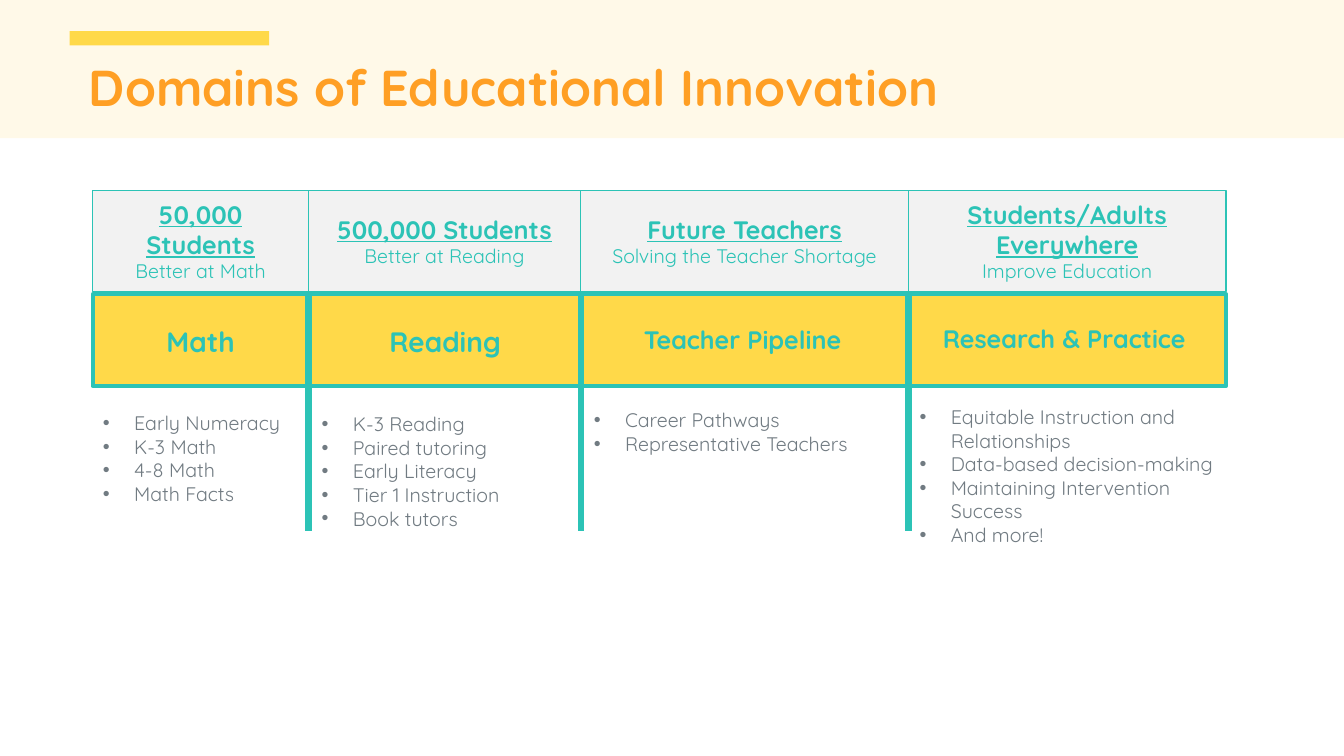
"""Build the slide on the four domains of educational innovation."""
from lxml import etree
from pptx import Presentation, util as u
from pptx.dml.color import RGBColor
from pptx.enum import shapes, text
from pptx.oxml.ns import qn

COLORS = {"band": "FFF4D2", "yellow": "FFD949", "orange": "FF9F24",
          "teal": "2CC3B6", "panel": "F2F2F2", "gray": "717B82"}
EDGES = [0.92, 3.06, 5.76, 9.01, 12.16]
GOAL_TOP, GOAL_HEIGHT = 1.89, 1
DIVIDER_BOTTOM = 5.27
DOMAINS = [
    {"goal": "50,000 Students", "detail": "Better at Math",
     "label": "Math", "label_size": 20, "label_box": (0.98, 3.17, 2.02, 0.44),
     "list_box": (0.92, 4.03, 2.19, 1.25),
     "topics": ["Early Numeracy", "K-3 Math", "4-8 Math", "Math Facts"]},
    {"goal": "500,000 Students", "detail": "Better at Reading",
     "label": "Reading", "label_size": 20, "label_box": (3.05, 3.17, 2.73, 0.44),
     "list_box": (3.09, 4.04, 2.61, 1.28),
     "topics": ["K-3 Reading", "Paired tutoring", "Early Literacy",
                "Tier 1 Instruction", "Book tutors"]},
    {"goal": "Future Teachers", "detail": "Solving the Teacher Shortage",
     "label": "Teacher Pipeline", "label_size": 18, "label_box": (6, 3.17, 2.73, 0.4),
     "list_box": (5.79, 4, 3.03, 0.81),
     "topics": ["Career Pathways", "Representative Teachers"]},
    {"goal": "Students/Adults Everywhere", "detail": "Improve Education",
     "label": "Research & Practice", "label_size": 18, "label_box": (9.19, 3.16, 2.73, 0.4),
     "list_box": (9.02, 3.97, 3.24, 2.15),
     "topics": ["Equitable Instruction and Relationships",
                "Data-based decision-making",
                "Maintaining Intervention Success", "And more!"]},
]


def add_box(box, fill, line_width=0):
    """Add a filled rectangle, outlined in teal if a width is given."""
    shape = slide.shapes.add_shape(shapes.MSO_SHAPE.RECTANGLE, *map(u.Inches, box))
    shape.shadow.inherit = False
    shape.fill.solid()
    shape.fill.fore_color.rgb = RGBColor.from_string(COLORS[fill])
    if line_width:
        shape.line.color.rgb = RGBColor.from_string(COLORS["teal"])
        shape.line.width = u.Pt(line_width)
    else:
        shape.line.fill.background()
    return shape


def add_run(paragraph, words, size, color, bold=False, underline=False):
    """Add one formatted run to a paragraph."""
    run = paragraph.add_run()
    run.text = words
    run.font.name = "Quicksand"
    run.font.size = u.Pt(size)
    run.font.bold = bold
    run.font.underline = underline
    run.font.color.rgb = RGBColor.from_string(COLORS[color])


deck = Presentation()
deck.slide_width, deck.slide_height = u.Inches(13.33), u.Inches(7.5)
slide = deck.slides.add_slide(deck.slide_layouts.get_by_name("Comparison"))
title, *topic_lists = slide.placeholders

band = add_box((0, 0, 13.33, 1.37), "band")
band_color = band.fill._xPr.find(qn("a:solidFill"))[0]
etree.SubElement(band_color, qn("a:alpha"), val="49000")
add_box((0.69, 0.31, 1.98, 0.14), "yellow")
slide.shapes._spTree.append(title._element)

title.left, title.top, title.width, title.height = map(u.Inches, (0.78, 0.57, 12.55, 0.81))
title.text_frame.vertical_anchor = text.MSO_ANCHOR.TOP
title.text_frame.auto_size = text.MSO_AUTO_SIZE.NONE
heading = title.text_frame.paragraphs[0]
heading.alignment = text.PP_ALIGN.LEFT
heading.line_spacing = 0.9
add_run(heading, "Domains of Educational Innovation", 36, "orange", bold=True)

for domain, left, right in zip(DOMAINS, EDGES, EDGES[1:]):
    goal = add_box((left, GOAL_TOP, right - left, GOAL_HEIGHT), "panel", 1)
    goal.text_frame.word_wrap = True
    goal.text_frame.vertical_anchor = text.MSO_ANCHOR.MIDDLE
    goal_line = goal.text_frame.paragraphs[0]
    detail_line = goal.text_frame.add_paragraph()
    goal_line.alignment = detail_line.alignment = text.PP_ALIGN.CENTER
    add_run(goal_line, domain["goal"], 18, "teal", bold=True, underline=True)
    add_run(detail_line, domain["detail"], 14, "teal")

add_box((EDGES[0], 2.92, EDGES[-1] - EDGES[0], 0.91), "yellow", 3)

for edge in EDGES[1:-1]:
    divider = slide.shapes.add_connector(
        shapes.MSO_CONNECTOR.STRAIGHT, u.Inches(edge), u.Inches(GOAL_TOP + GOAL_HEIGHT),
        u.Inches(edge), u.Inches(DIVIDER_BOTTOM))
    divider.line.color.rgb = RGBColor.from_string(COLORS["teal"])
    divider.line.width = u.Pt(4.5)
    etree.SubElement(divider._element.spPr, qn("a:effectLst"))

for domain, topic_list in zip(DOMAINS, topic_lists):
    label = slide.shapes.add_textbox(*map(u.Inches, domain["label_box"]))
    label.text_frame.word_wrap = True
    label_line = label.text_frame.paragraphs[0]
    label_line.alignment = text.PP_ALIGN.CENTER
    add_run(label_line, domain["label"], domain["label_size"], "teal", bold=True)

    topic_list.left, topic_list.top, topic_list.width, topic_list.height = map(
        u.Inches, domain["list_box"])
    slide.shapes._spTree.append(topic_list._element)
    frame = topic_list.text_frame
    frame.vertical_anchor = text.MSO_ANCHOR.TOP
    frame.auto_size = text.MSO_AUTO_SIZE.NONE
    for number, topic in enumerate(domain["topics"]):
        item = frame.add_paragraph() if number else frame.paragraphs[0]
        item.space_before = u.Pt(0)
        props = item._p.get_or_add_pPr()
        props.set("marL", str(u.Inches(0.31)))
        props.set("indent", str(u.Inches(-0.31)))
        bullet_color = etree.SubElement(props, qn("a:buClr"))
        etree.SubElement(bullet_color, qn("a:srgbClr"), val=COLORS["gray"])
        etree.SubElement(props, qn("a:buFont"), typeface="Arial")
        etree.SubElement(props, qn("a:buChar"), char="•")
        add_run(item, topic, 14, "gray")

deck.save("out.pptx")
